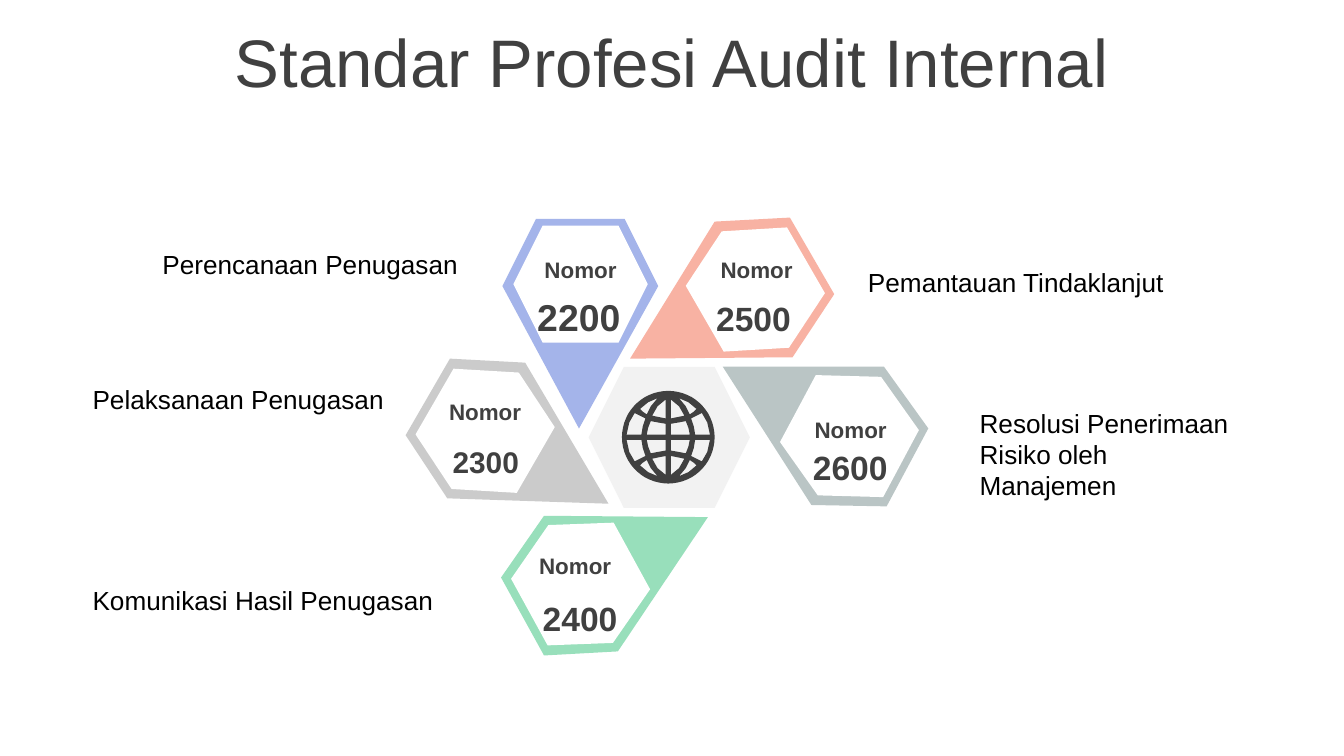
"""Build a slide of five audit standards set as petals around a globe."""
from math import cos, pi, sin
from pptx import Presentation
from pptx.dml.color import RGBColor
from pptx.enum.shapes import MSO_SHAPE
from pptx.enum.text import MSO_ANCHOR, MSO_AUTO_SIZE, PP_ALIGN
from pptx.util import Inches, Pt

THEME = {
    "font": "Arial", "ink": "404040", "black": "000000", "white": "FFFFFF",
    "core": "F2F2F2", "title": 36, "label": 14, "word": 12,
}
TITLE = "Standar Profesi Audit Internal"
PETALS = [
    {"fill": "A4B4EA", "hex": (3.82, 1.68), "turn": 0,
     "edge": [(3.99, 1.63), (4.65, 1.63), (4.9, 2.13), (4.31, 3.19), (3.74, 2.13)],
     "num": ("2200", 20, 3.89, 2.14), "word": (3.79, 1.86),
     "label": ("Perencanaan Penugasan", 1.11, 1.8, 2.53, 0.34)},
    {"fill": "F8B2A3", "hex": (5.12, 1.72), "turn": 60,
     "edge": [(5.88, 1.62), (6.21, 2.19), (5.9, 2.66), (4.69, 2.67), (5.32, 1.65)],
     "num": ("2500", 18, 5.22, 2.17), "word": (5.1, 1.86),
     "label": ("Pemantauan Tindaklanjut", 6.36, 1.93, 2.89, 0.34)},
    {"fill": "BAC5C5", "hex": (5.82, 2.81), "turn": 118.1,
     "edge": [(6.91, 3.19), (6.6, 3.77), (6.04, 3.76), (5.38, 2.73), (6.58, 2.73)],
     "num": ("2600", 18, 5.94, 3.28), "word": (5.8, 3.05),
     "label": ("Resolusi Penerimaan Risiko oleh Manajemen", 7.19, 2.98, 2.22, 0.57)},
    {"fill": "98DFBB", "hex": (3.82, 3.91), "turn": 241.3,
     "edge": [(4.05, 4.88), (3.73, 4.3), (4.05, 3.84), (5.27, 3.85), (4.6, 4.85)],
     "num": ("2400", 18, 3.93, 4.4), "word": (3.75, 4.06),
     "label": ("Komunikasi Hasil Penugasan", 0.59, 4.3, 3.11, 0.34)},
    {"fill": "CBCBCB", "hex": (3.11, 2.77), "turn": 300,
     "edge": [(3.02, 3.24), (3.35, 2.67), (3.91, 2.7), (4.53, 3.75), (3.33, 3.71)],
     "num": ("2300", 16, 3.26, 3.25), "word": (3.08, 2.91),
     "label": ("Pelaksanaan Penugasan", 0.59, 2.8, 2.39, 0.34)},
]
GLOBE = {"box": (4.63, 2.91), "wide": 0.69}
CELLS = [
    [(2, 2), (2, 10), (8, 11), (13, 12), (15, 7), (16, 2)],
    [(20, 2), (19, 8), (17, 14), (21, 16), (25, 18), (29, 11), (31, 2)],
    [(2, 14), (2, 28), (8, 23), (12, 16), (7, 15)],
    [(16, 17), (13, 23), (8, 29), (15, 26), (21, 21), (19, 19)],
]


def paint(shape, color):
    shape.shadow.inherit = False
    shape.fill.solid()
    shape.fill.fore_color.rgb = RGBColor.from_string(color)
    shape.line.fill.background()


def hexa(slide, box, color, turn=0):
    shape = slide.shapes.add_shape(MSO_SHAPE.HEXAGON, *map(Inches, box))
    shape.rotation = turn
    paint(shape, color)


def trace(slide, rings, color):
    rings = [[(x * 1000, y * 1000) for x, y in ring] for ring in rings]
    pen = slide.shapes.build_freeform(*rings[0][0], scale=Inches(0.001))
    pen.add_line_segments(rings[0][1:])
    for ring in rings[1:]:
        pen.move_to(*ring[0])
        pen.add_line_segments(ring[1:])
    paint(pen.convert_to_shape(), color)


def write(slide, text, box, size, color="ink", align=PP_ALIGN.LEFT, bold=False, wrap=True, grow=True):
    frame = slide.shapes.add_textbox(*map(Inches, box)).text_frame
    frame.word_wrap = wrap
    frame.auto_size = MSO_AUTO_SIZE.SHAPE_TO_FIT_TEXT if grow else MSO_AUTO_SIZE.NONE
    frame.vertical_anchor = MSO_ANCHOR.TOP if grow else MSO_ANCHOR.MIDDLE
    para = frame.paragraphs[0]
    para.text, para.alignment = text, align
    font = para.font
    font.name, font.size, font.bold = THEME["font"], Pt(size), bold
    font.color.rgb = RGBColor.from_string(THEME[color])


def globe(slide):
    r = GLOBE["wide"] / 2
    x, y = (side + r for side in GLOBE["box"])
    turns = [2 * pi * i / 60 for i in range(61)]
    rings = [[(x + r * cos(t), y + r * sin(t)) for t in turns]]
    for h in (1, -1):
        for v in (1, -1):
            for cell in CELLS:
                rings.append([(x + h * a / 100, y + v * b / 100) for a, b in cell + cell[:1]])
    trace(slide, rings, THEME["ink"])


def main():
    deck = Presentation()
    deck.slide_width, deck.slide_height = Inches(10), Inches(10 * 9 / 16)
    slide = deck.slides.add_slide(deck.slide_layouts[6])
    write(slide, TITLE, (0, 0.14, 10, 0.63), THEME["title"], align=PP_ALIGN.CENTER, grow=False)
    for petal in PETALS:
        trace(slide, [petal["edge"] + petal["edge"][:1]], petal["fill"])
        hexa(slide, (*petal["hex"], 1, 0.87), THEME["white"], petal["turn"])
    hexa(slide, (4.38, 2.73, 1.2, 1.05), THEME["core"])
    globe(slide)
    for petal in PETALS:
        num, size, left, top = petal["num"]
        box = (left, top, 0.2 + size * 2.25 / 72, 0.1 + size * 1.2 / 72)
        write(slide, num, box, size, align=PP_ALIGN.RIGHT, bold=True, wrap=False)
        write(slide, "Nomor", (*petal["word"], 1.06, 0.3), THEME["word"], align=PP_ALIGN.CENTER, bold=True)
        text, *box = petal["label"]
        write(slide, text, box, THEME["label"], "black")
    deck.save("out.pptx")


if __name__ == "__main__":
    main()
